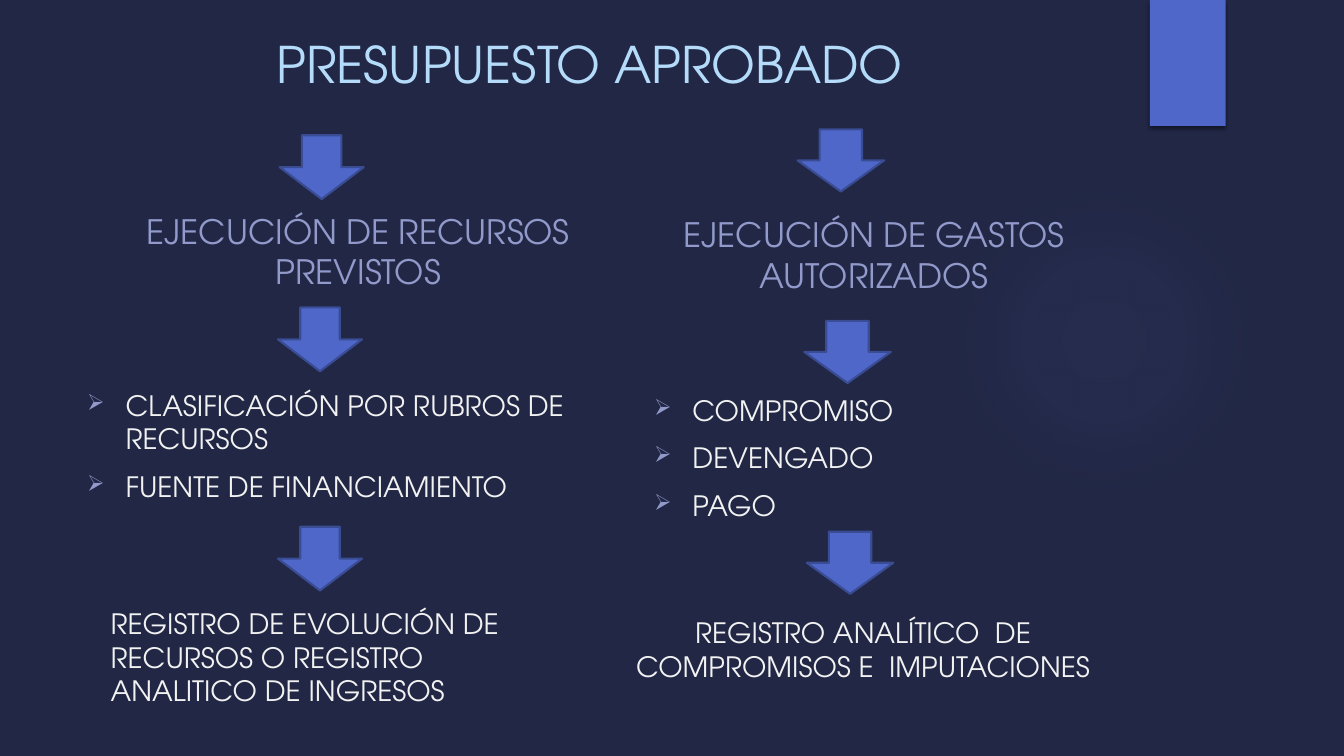
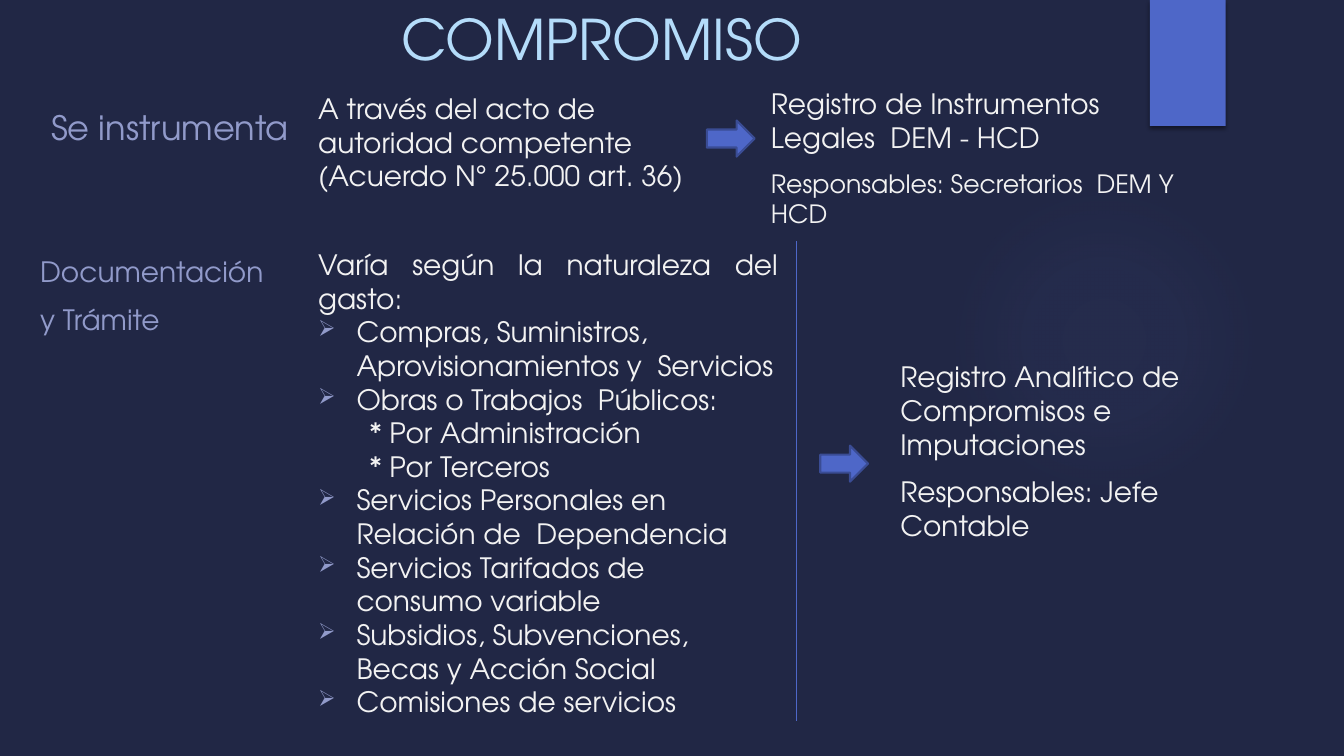
from lxml.etree import SubElement
from pptx import Presentation
from pptx.dml.color import RGBColor
from pptx.enum.shapes import MSO_CONNECTOR, MSO_SHAPE
from pptx.enum.text import MSO_ANCHOR, PP_ALIGN
from pptx.oxml.ns import qn
from pptx.util import Emu, Inches, Pt

NAVY = RGBColor(0x21, 0x27, 0x45)
BLUE = RGBColor(0x4E, 0x67, 0xC8)
EDGE = RGBColor(0x3A, 0x4C, 0x94)
GLOW = RGBColor(0x59, 0x68, 0xB0)
SKY = RGBColor(0xB4, 0xDC, 0xFA)
LILAC = RGBColor(0x91, 0x9A, 0xCA)
WHITE = RGBColor(0xF2, 0xF2, 0xF2)
BLACK = RGBColor(0, 0, 0)
FONT = "TeX Gyre Adventor"

COLS, ROWS = 160, 90
WIDTH, HEIGHT = Inches(13.33), Inches(7.5)
HANGING = Inches(0.38)
SUB_INDENT = Inches(0.51)


def col(n):
    return Emu(round(WIDTH * n / COLS))


def row(n):
    return Emu(round(HEIGHT * n / ROWS))


def box(left, top, width, height):
    return col(left), row(top), col(width), row(height)


def add_color(parent, color, alpha):
    clr = SubElement(parent, qn("a:srgbClr"), val=str(color))
    SubElement(clr, qn("a:alpha"), val=str(alpha * 1000))


def add_plain_shape(slide, kind, area):
    sp = slide.shapes.add_shape(kind, *box(*area))
    sp.shadow.inherit = False
    sp.fill.solid()
    sp.fill.fore_color.rgb = BLUE
    sp.line.fill.background()
    return sp


def add_glow(slide):
    sp = add_plain_shape(slide, MSO_SHAPE.OVAL, (112.9, 22, 37, 37))
    sp.fill.background()
    props = sp._element.spPr
    grad = SubElement(props, qn("a:gradFill"), rotWithShape="1")
    props.replace(props.find(qn("a:noFill")), grad)
    stops = SubElement(grad, qn("a:gsLst"))
    for pos, alpha in ((0, 7), (36, 6), (69, 0), (100, 0)):
        add_color(SubElement(stops, qn("a:gs"), pos=str(pos * 1000)), GLOW, alpha)
    path = SubElement(grad, qn("a:path"), path="circle")
    SubElement(path, qn("a:fillToRect"), l="50000", t="50000", r="50000", b="50000")


def add_tab(slide):
    sp = add_plain_shape(slide, MSO_SHAPE.RECTANGLE, (136.9, 0, 9, 15))
    effects = sp._element.spPr.find(qn("a:effectLst"))
    shadow = SubElement(effects, qn("a:outerShdw"), blurRad=str(Pt(3)),
                        dist=str(Pt(2)), dir="5400000", rotWithShape="0")
    add_color(shadow, BLACK, 45)


def new_slide(prs):
    slide = prs.slides.add_slide(prs.slide_layouts[6])
    add_glow(slide)
    add_tab(slide)
    return slide


def add_bullet(p):
    props = p._p.get_or_add_pPr()
    props.set("marL", str(HANGING))
    props.set("indent", str(-HANGING))
    color = SubElement(props, qn("a:buClr"))
    SubElement(color, qn("a:srgbClr"), val=str(LILAC))
    SubElement(props, qn("a:buSzPct"), val="80000")
    SubElement(props, qn("a:buChar"), char="➢")


def add_text(slide, area, lines, size=20, color=WHITE, align=PP_ALIGN.LEFT,
             anchor=MSO_ANCHOR.BOTTOM, gap=10, bullets=False):
    tf = slide.shapes.add_textbox(*box(*area)).text_frame
    tf.word_wrap = True
    tf.vertical_anchor = anchor
    for i, line in enumerate(lines):
        p = tf.paragraphs[0] if i == 0 else tf.add_paragraph()
        p.text = line
        p.alignment = align
        if i and gap:
            p.space_before = Pt(gap)
        if bullets:
            add_bullet(p)
        p.font.size = Pt(size)
        p.font.name = FONT
        p.font.color.rgb = color
    return tf


def add_title(slide, area, text, size):
    add_text(slide, area, [text], size, SKY, PP_ALIGN.CENTER, MSO_ANCHOR.TOP)


def add_heading(slide, area, text):
    add_text(slide, area, [text], 24, LILAC, PP_ALIGN.CENTER)


def add_list(slide, area, items):
    add_text(slide, area, items, anchor=MSO_ANCHOR.TOP, bullets=True)


def add_arrow(slide, kind, center, size, shaft=0.5):
    (x, y), (w, h) = center, size
    sp = add_plain_shape(slide, kind, (x - w / 2, y - h / 2, w, h))
    sp.adjustments[0] = shaft
    sp.line.color.rgb = EDGE
    sp.line.width = Pt(1.5)


def add_divider(slide, x, top, bottom):
    line = slide.shapes.add_connector(MSO_CONNECTOR.STRAIGHT,
                                      col(x), row(top), col(x), row(bottom))
    line.line.color.rgb = BLUE
    line.line.width = Pt(0.75)
    SubElement(line._element.spPr, qn("a:effectLst"))


def build_budget(prs):
    slide = new_slide(prs)
    add_title(slide, (8.5, 3.4, 123.4, 16.6), "PRESUPUESTO APROBADO", 36)

    add_heading(slide, (13.3, 24.5, 58.7, 10.8), "EJECUCIÓN DE RECURSOS PREVISTOS")
    add_list(slide, (9.2, 45.6, 60.2, 16.9),
             ["CLASIFICACIÓN POR RUBROS DE RECURSOS", "FUENTE DE FINANCIAMIENTO"])
    add_text(slide, (12, 74.4, 55.2, 10.4),
             ["REGISTRO DE EVOLUCIÓN DE RECURSOS O REGISTRO ANALITICO DE INGRESOS"])

    add_heading(slide, (74, 23.9, 60.1, 11.8), "EJECUCIÓN DE GASTOS AUTORIZADOS")
    add_list(slide, (76.7, 46.2, 49.6, 16.3), ["COMPROMISO", "DEVENGADO", "PAGO"])
    add_text(slide, (71.2, 70.7, 63.1, 11.2),
             ["REGISTRO ANALÍTICO  DE COMPROMISOS E  IMPUTACIONES"],
             align=PP_ALIGN.CENTER)

    for center in ((38.3, 19.9), (38.1, 40.4), (38.1, 66.5)):
        add_arrow(slide, MSO_SHAPE.DOWN_ARROW, center, (10, 7.6), 0.47)
    for center in ((100.1, 19.1), (100.9, 41.9), (101.2, 67)):
        add_arrow(slide, MSO_SHAPE.DOWN_ARROW, center, (10.3, 7.4), 0.49)


def add_expense_list(slide):
    intro = "Varía según la naturaleza del gasto:"
    subitems = ["* Por Administración", "* Por Terceros"]
    items = ["Compras, Suministros, Aprovisionamientos y  Servicios",
             "Obras o Trabajos  Públicos:",
             *subitems,
             "Servicios Personales en Relación de  Dependencia",
             "Servicios Tarifados de consumo variable",
             "Subsidios, Subvenciones, Becas y Acción Social",
             "Comisiones de servicios"]
    tf = add_text(slide, (36.7, 28.9, 57.1, 59.5), [intro, *items],
                  anchor=MSO_ANCHOR.TOP, gap=0)
    tf.paragraphs[0].alignment = PP_ALIGN.JUSTIFY
    for p in tf.paragraphs[1:]:
        if p.text in subitems:
            p._p.get_or_add_pPr().set("marL", str(SUB_INDENT))
        else:
            props = p._p.get_or_add_pPr()
            font = props.find(qn("a:defRPr"))
            add_bullet(p)
            props.append(font)


def build_commitment(prs):
    slide = new_slide(prs)
    add_title(slide, (13.3, 0, 116.6, 9.1), "COMPROMISO", 40)

    add_text(slide, (4.9, 12.6, 32.8, 5.5), ["Se instrumenta"], 24, LILAC)
    add_text(slide, (36.7, 12, 47.5, 11.5),
             ["A través del acto de autoridad competente (Acuerdo N° 25.000 art. 36)"])
    tf = add_text(slide, (90.6, 8.2, 51.4, 19.6),
                  ["Registro de Instrumentos Legales  DEM - HCD",
                   "Responsables: Secretarios  DEM Y HCD"])
    tf.paragraphs[1].font.size = Pt(18)

    add_text(slide, (3.6, 28.7, 35.3, 11.9), ["Documentación", "y Trámite"], color=LILAC)
    add_expense_list(slide)
    add_divider(slide, 94.8, 28.7, 85.8)
    add_text(slide, (106, 45.4, 41.3, 19.7),
             ["Registro Analítico de Compromisos e Imputaciones",
              "Responsables: Jefe  Contable"])

    for center in ((87, 16.5), (100.5, 55.2)):
        add_arrow(slide, MSO_SHAPE.RIGHT_ARROW, center, (5.7, 4.3))


def main():
    prs = Presentation()
    prs.slide_width, prs.slide_height = WIDTH, HEIGHT
    background = prs.slide_master.background.fill
    background.solid()
    background.fore_color.rgb = NAVY
    build_budget(prs)
    build_commitment(prs)
    prs.save("out.pptx")


if __name__ == "__main__":
    main()
